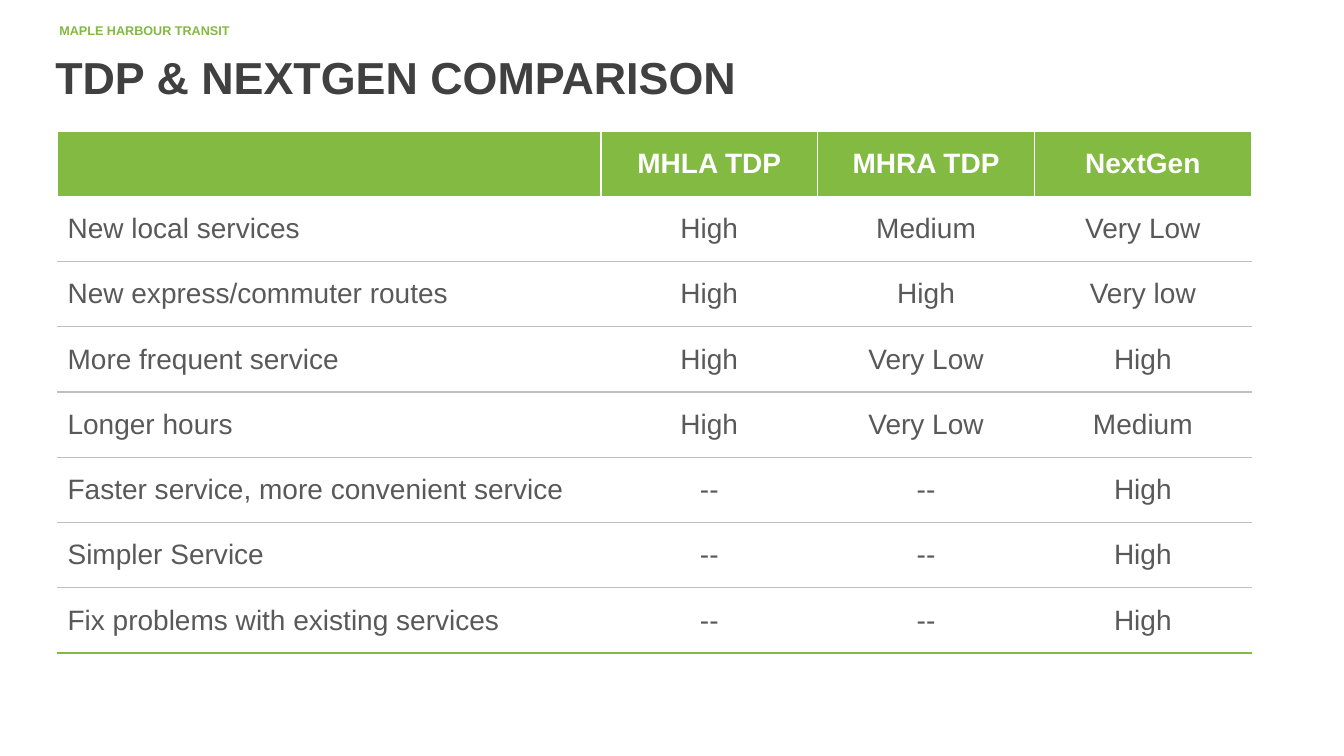
from lxml import etree
from pptx import Presentation
from pptx.dml.color import RGBColor
from pptx.enum import text
from pptx.oxml import ns
from pptx.util import Inches, Pt

FONT = "Arial"
COLORS = {
    "brand": "82B941",
    "header": "83BA41",
    "title": "404040",
    "body": "595959",
    "rule": "BFBFBF",
    "white": "FFFFFF",
}
HEADINGS = ["", "MHLA TDP", "MHRA TDP", "NextGen"]
RATINGS = [
    ["New local services", "High", "Medium", "Very Low"],
    ["New express/commuter routes", "High", "High", "Very low"],
    ["More frequent service", "High", "Very Low", "High"],
    ["Longer hours", "High", "Very Low", "Medium"],
    ["Faster service, more convenient service", "--", "--", "High"],
    ["Simpler Service", "--", "--", "High"],
    ["Fix problems with existing services", "--", "--", "High"],
]


def style(paragraph, size, color, bold):
    font = paragraph.font
    for target in [font] + [run.font for run in paragraph.runs]:
        target.name = FONT
        target.size = Pt(size)
        target.bold = bold
        target.color.rgb = RGBColor.from_string(COLORS[color])


def add_heading(slide, box, words, size, color, anchor):
    frame = slide.shapes.add_textbox(*map(Inches, box)).text_frame
    frame.word_wrap = True
    frame.vertical_anchor = anchor
    frame.text = words
    style(frame.paragraphs[0], size, color, True)


def set_borders(cell, top, bottom):
    """Draw white sides and the given top and bottom rules, 1 pt each."""
    properties = cell._tc.get_or_add_tcPr()
    sides = [("lnL", "white"), ("lnR", "white"), ("lnT", top), ("lnB", bottom)]
    for position, (tag, color) in enumerate(sides):
        line = etree.Element(ns.qn(f"a:{tag}"), w=str(Pt(1)))
        fill = etree.SubElement(line, ns.qn("a:solidFill"))
        etree.SubElement(fill, ns.qn("a:srgbClr"), val=COLORS[color])
        properties.insert(position, line)


def add_comparison(slide, box, label_width):
    left, top, width, height = box
    rows = [HEADINGS] + RATINGS
    table = slide.shapes.add_table(
        len(rows), len(HEADINGS), *map(Inches, box)).table
    table.horz_banding = False

    rating_width = (width - label_width) / (len(HEADINGS) - 1)
    for index, column in enumerate(table.columns):
        column.width = Inches(rating_width if index else label_width)
    for row in table.rows:
        row.height = Inches(height / len(rows))

    last = len(rows) - 1
    for r, values in enumerate(rows):
        for c, value in enumerate(values):
            cell = table.cell(r, c)
            cell.text = value
            cell.vertical_anchor = text.MSO_ANCHOR.MIDDLE
            paragraph = cell.text_frame.paragraphs[0]
            if c:
                paragraph.alignment = text.PP_ALIGN.CENTER
            style(paragraph, 20, "body" if r else "white", r == 0)
            if r:
                cell.fill.background()
            else:
                cell.fill.solid()
                cell.fill.fore_color.rgb = RGBColor.from_string(COLORS["header"])
            above = "rule" if r > 1 else "white"
            below = "white" if r == 0 else "header" if r == last else "rule"
            set_borders(cell, above, below)


def main():
    deck = Presentation()
    deck.slide_width, deck.slide_height = Inches(13.33), Inches(7.5)
    slide = deck.slides.add_slide(deck.slide_layouts[6])
    add_heading(slide, (0.49, 0.18, 9.46, 0.25), "MAPLE HARBOUR TRANSIT",
                9, "brand", text.MSO_ANCHOR.TOP)
    add_heading(slide, (0.45, 0.36, 12.21, 0.8), "TDP & NEXTGEN COMPARISON",
                32, "title", text.MSO_ANCHOR.MIDDLE)
    add_comparison(slide, (0.57, 1.3, 11.84, 5.18), label_width=5.39)
    deck.save("out.pptx")


if __name__ == "__main__":
    main()
